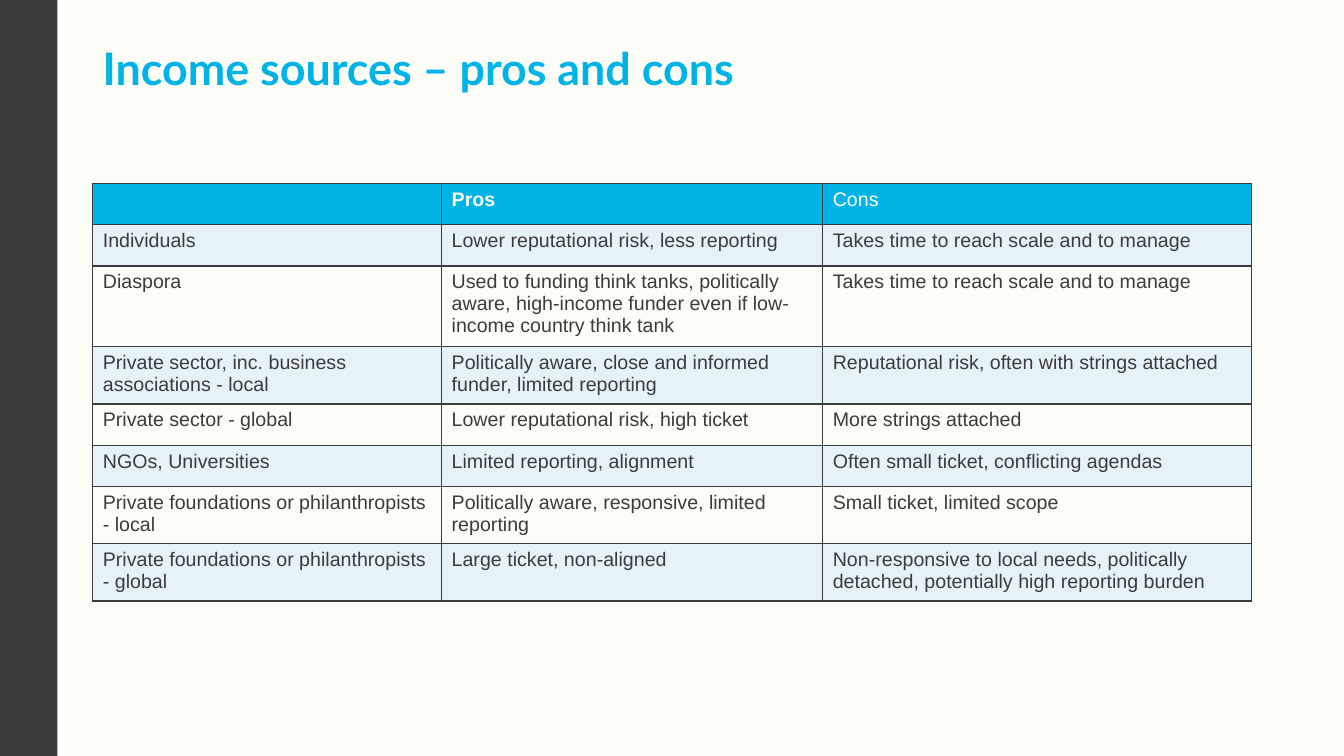
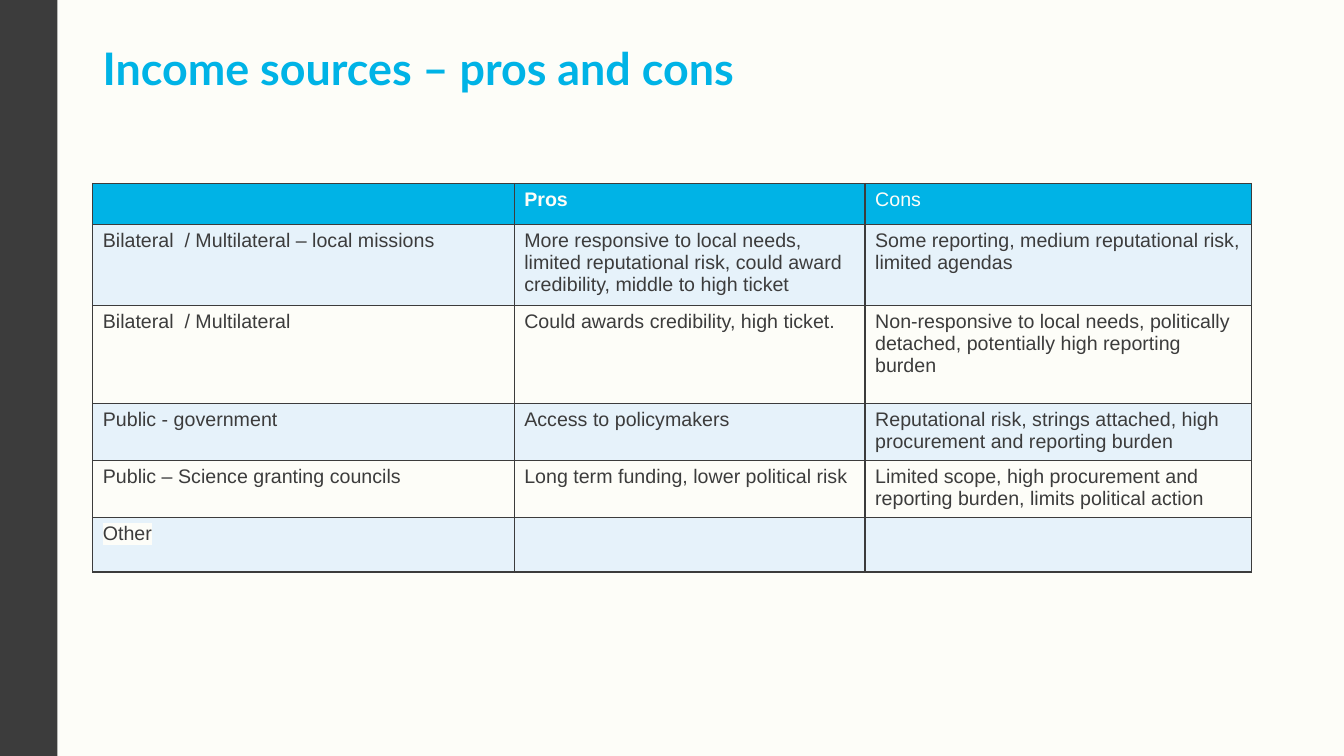
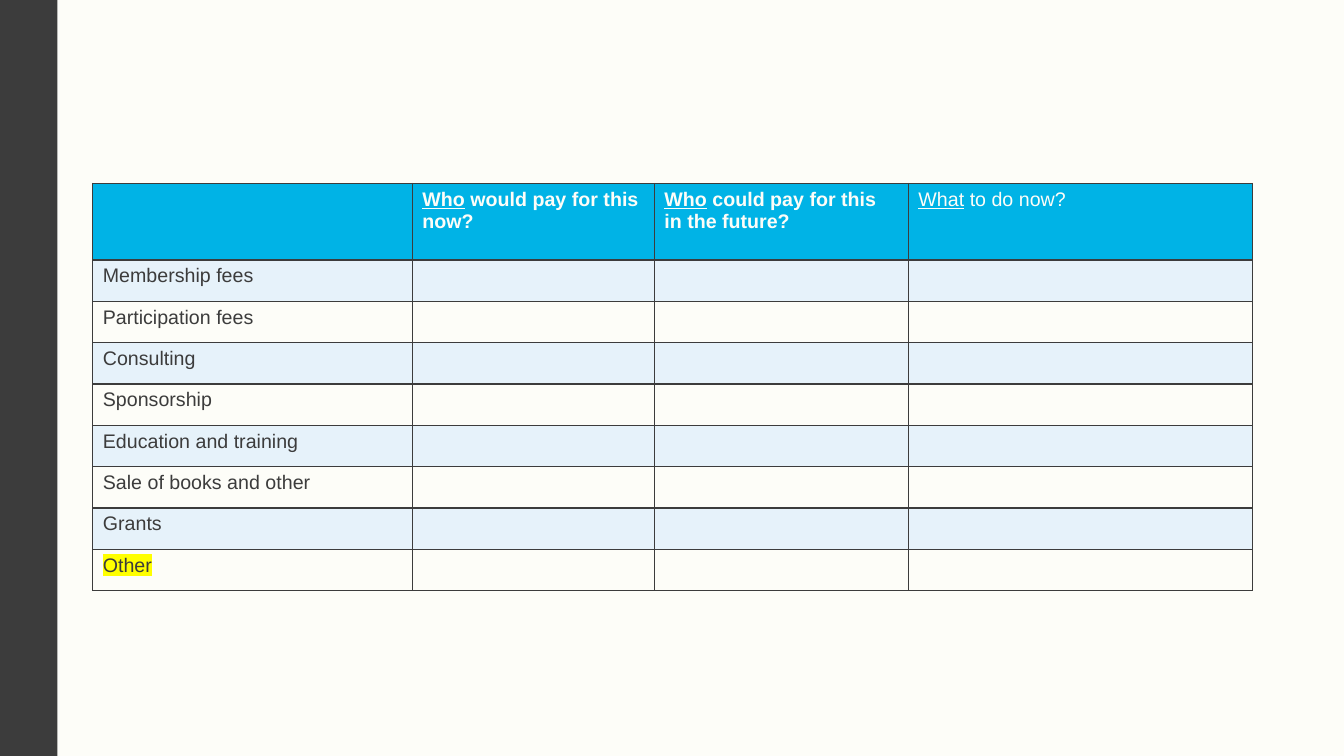
"""Build three slides of tables on income sources for think tanks."""
from lxml.etree import SubElement
from pptx import Presentation
from pptx.dml.color import RGBColor
from pptx.enum.shapes import MSO_SHAPE
from pptx.oxml.ns import qn
from pptx.util import Inches, Pt

COLORS = {
    "paper": "FDFDF8",
    "dark": "3C3C3C",
    "accent": "00B3E6",
    "stripe": "E6F2FA",
    "yellow": "FFFF00",
}
TITLE = "Income sources – pros and cons"
BORDER = Pt(1)
ROW = 0.41
TWO_LINES = 0.54
THREE_LINES = 0.76

SOURCES = [
    ("", "Pros", "Cons"),
    ("Individuals", "Lower reputational risk, less reporting",
     "Takes time to reach scale and to manage"),
    ("Diaspora",
     "Used to funding think tanks, politically aware, high-income funder "
     "even if low-income country think tank",
     "Takes time to reach scale and to manage"),
    ("Private sector, inc. business associations - local",
     "Politically aware, close and informed funder, limited reporting",
     "Reputational risk, often with strings attached"),
    ("Private sector - global", "Lower reputational risk, high ticket",
     "More strings attached"),
    ("NGOs, Universities", "Limited reporting, alignment",
     "Often small ticket, conflicting agendas"),
    ("Private foundations or philanthropists - local",
     "Politically aware, responsive, limited reporting",
     "Small ticket, limited scope"),
    ("Private foundations or philanthropists - global",
     "Large ticket, non-aligned",
     "Non-responsive to local needs, politically detached, "
     "potentially high reporting burden"),
]
PUBLIC_SOURCES = [
    ("", "Pros", "Cons"),
    ("Bilateral  / Multilateral – local missions",
     "More responsive to local needs, limited reputational risk, "
     "could award credibility, middle to high ticket",
     "Some reporting, medium reputational risk, limited agendas"),
    ("Bilateral  / Multilateral", "Could awards credibility, high ticket.",
     "Non-responsive to local needs, politically detached, "
     "potentially high reporting burden"),
    ("Public - government", "Access to policymakers",
     "Reputational risk, strings attached, high procurement and "
     "reporting burden"),
    ("Public – Science granting councils",
     "Long term funding, lower political risk",
     "Limited scope, high procurement and reporting burden, "
     "limits political action"),
    ("Other", "", ""),
]
INCOME_TYPES = ["Membership fees", "Participation fees", "Consulting",
                "Sponsorship", "Education and training",
                "Sale of books and other", "Grants", "Other"]
PAYERS = [
    ("", ("Who", " would pay for this now?"),
     ("Who", " could pay for this in the future?"), ("What", " to do now?")),
] + [(name, "", "", "") for name in INCOME_TYPES]


def rgb(name):
    return RGBColor.from_string(COLORS[name])


def add_run(p, text, size=14, font="Arial", color="dark", bold=False,
            underline=False, highlight=None):
    r = p.add_run()
    r.text = text
    r.font.size = Pt(size)
    r.font.name = font
    r.font.bold = bold
    r.font.underline = underline
    r.font.color.rgb = rgb(color)
    if highlight:
        rPr = r.font._element
        mark = SubElement(rPr, qn("a:highlight"))
        SubElement(mark, qn("a:srgbClr"), val=COLORS[highlight])
        rPr.find(qn("a:solidFill")).addnext(mark)


def add_slide(prs, title=None):
    slide = prs.slides.add_slide(prs.slide_layouts[6])
    band = slide.shapes.add_shape(MSO_SHAPE.RECTANGLE, 0, 0, Inches(0.57),
                                  prs.slide_height)
    band.shadow.inherit = False
    band.fill.solid()
    band.fill.fore_color.rgb = rgb("dark")
    band.line.fill.background()
    if title:
        sp = slide.shapes.add_textbox(Inches(0.92), Inches(0.42),
                                      Inches(11.5), Inches(0.66))
        tf = sp.text_frame
        tf.word_wrap = True
        p = tf.paragraphs[0]
        p.line_spacing = 0.9
        add_run(p, title, size=32, font="Lato", color="accent", bold=True)
    return slide


def style_cell(cell, fill):
    tcPr = cell._tc.get_or_add_tcPr()
    for side in ("lnL", "lnR", "lnT", "lnB"):
        ln = SubElement(tcPr, qn(f"a:{side}"), w=str(BORDER))
        line_fill = SubElement(ln, qn("a:solidFill"))
        SubElement(line_fill, qn("a:srgbClr"), val=COLORS["dark"])
    cell.fill.solid()
    cell.fill.fore_color.rgb = rgb(fill)


def fill_cell(cell, content, **fmt):
    p = cell.text_frame.paragraphs[0]
    if isinstance(content, tuple):
        lead, rest = content
        add_run(p, lead, underline=True, **fmt)
        add_run(p, rest, **fmt)
    elif content:
        add_run(p, content, **fmt)


def add_grid(slide, rows, widths, heights, other_highlight=None):
    frame = slide.shapes.add_table(
        len(rows), len(widths), Inches(0.92), Inches(1.82),
        Inches(sum(widths)), Inches(sum(heights)))
    table = frame.table
    table.horz_banding = False
    for column, width in zip(table.columns, widths):
        column.width = Inches(width)
    for i, (row, height) in enumerate(zip(rows, heights)):
        table.rows[i].height = Inches(height)
        for j, content in enumerate(row):
            cell = table.cell(i, j)
            if i == 0:
                style_cell(cell, "accent")
                fill_cell(cell, content, color="paper",
                          bold=j < len(widths) - 1)
            else:
                style_cell(cell, "stripe" if i % 2 else "paper")
                mark = other_highlight if content == "Other" else None
                fill_cell(cell, content, highlight=mark)


def main():
    prs = Presentation()
    prs.slide_width = Inches(13.33)
    prs.slide_height = Inches(7.5)
    background = prs.slide_master.background.fill
    background.solid()
    background.fore_color.rgb = rgb("paper")

    add_grid(add_slide(prs, TITLE), SOURCES, [3.46, 3.78, 4.25],
             [ROW, ROW, THREE_LINES, TWO_LINES, ROW, ROW, TWO_LINES,
              TWO_LINES])
    add_grid(add_slide(prs, TITLE), PUBLIC_SOURCES, [4.18, 3.48, 3.83],
             [ROW, THREE_LINES, 0.97, TWO_LINES, TWO_LINES, TWO_LINES],
             other_highlight="paper")
    add_grid(add_slide(prs), PAYERS, [3.17, 2.4, 2.52, 3.41],
             [THREE_LINES] + [ROW] * len(INCOME_TYPES),
             other_highlight="yellow")
    prs.save("out.pptx")


if __name__ == "__main__":
    main()
